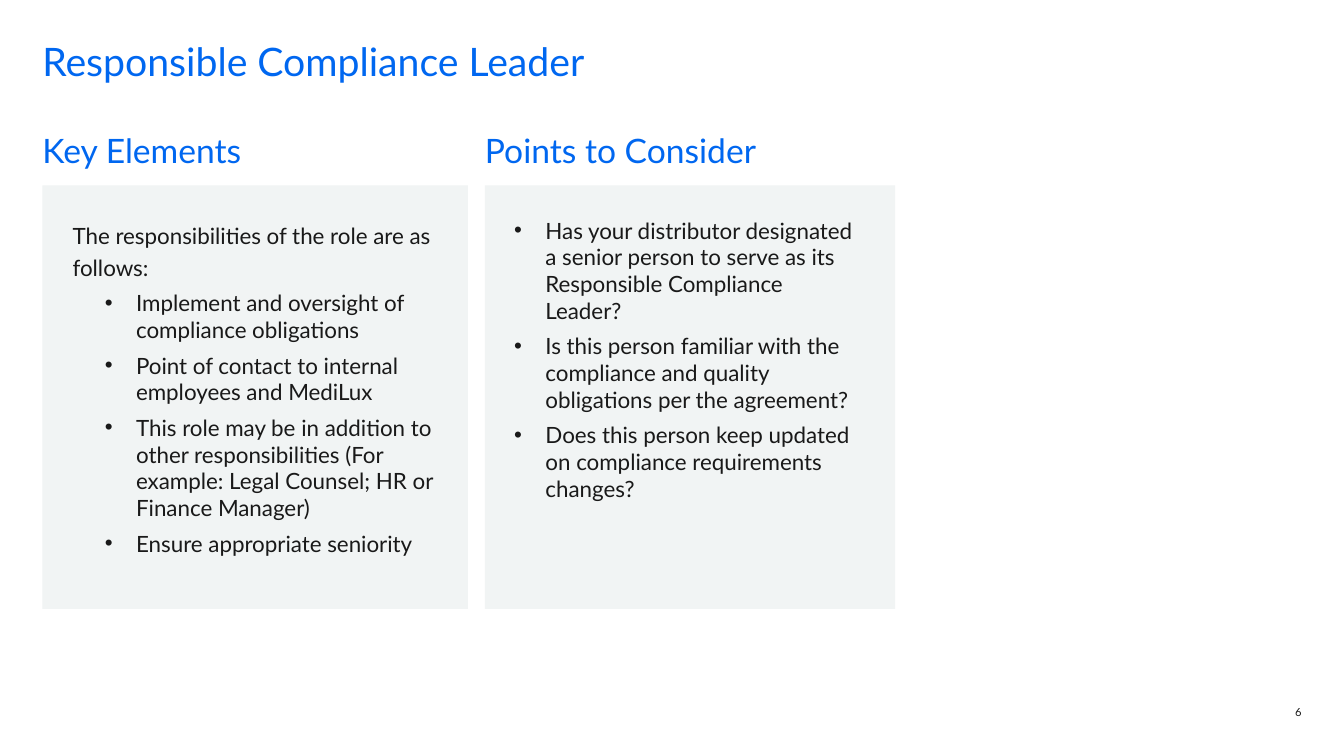
from dataclasses import dataclass

from lxml.etree import SubElement
from pptx import Presentation
from pptx.dml.color import RGBColor
from pptx.enum.shapes import MSO_SHAPE
from pptx.enum.text import MSO_ANCHOR, MSO_AUTO_SIZE, PP_ALIGN
from pptx.oxml.ns import qn
from pptx.slide import Slide
from pptx.text.text import TextFrame
from pptx.util import Inches, Pt

BLUE, INK, PANEL = "0067F0", "191919", "F1F4F4"
FONT = "Lato"
HANGING = 0.31


@dataclass(frozen=True)
class Line:
    text: str
    size: float = 16
    color: str = INK
    indent: float = 0
    bullet: bool = False
    spacing: float = 1.0
    after: float = 6
    align: PP_ALIGN = PP_ALIGN.LEFT


@dataclass(frozen=True)
class Column:
    heading: str
    left: float
    width: float
    body_left: float
    body_width: float
    body_height: float
    lines: list[Line]


def color_of(value: str) -> RGBColor:
    return RGBColor.from_string(value)


def add_bullet(para, indent: float) -> None:
    properties = para._p.get_or_add_pPr()
    properties.set("marL", str(Inches(indent)))
    properties.set("indent", str(Inches(-HANGING)))
    SubElement(properties, qn("a:buFont")).set("typeface", "Arial")
    SubElement(properties, qn("a:buChar")).set("char", "•")


def write_lines(frame: TextFrame, lines: list[Line]) -> None:
    frame_format = {
        "margin_left": 0, "margin_top": 0, "margin_right": 0, "margin_bottom": 0,
        "word_wrap": True, "auto_size": MSO_AUTO_SIZE.NONE,
        "vertical_anchor": MSO_ANCHOR.TOP,
    }
    for name, value in frame_format.items():
        setattr(frame, name, value)
    for index, line in enumerate(lines):
        para = frame.add_paragraph() if index else frame.paragraphs[0]
        if line.bullet:
            add_bullet(para, line.indent)
        para_format = {
            "alignment": line.align, "line_spacing": line.spacing,
            "space_before": Pt(0), "space_after": Pt(line.after),
        }
        for name, value in para_format.items():
            setattr(para, name, value)
        span = para.add_run()
        span.text = line.text
        for name, value in {"name": FONT, "size": Pt(line.size), "bold": False}.items():
            setattr(span.font, name, value)
        span.font.color.rgb = color_of(line.color)


def add_text(page: Slide, left: float, top: float, width: float, height: float,
             lines: list[Line]) -> None:
    box = page.shapes.add_textbox(Inches(left), Inches(top), Inches(width), Inches(height))
    write_lines(box.text_frame, lines)


def add_panel(page: Slide, column: Column) -> None:
    panel = page.shapes.add_shape(MSO_SHAPE.RECTANGLE, Inches(column.left), Inches(1.84),
                                  Inches(column.width), Inches(4.2))
    panel.shadow.inherit = False
    panel.fill.solid()
    panel.fill.fore_color.rgb = color_of(PANEL)
    panel.line.fill.background()


def add_column(page: Slide, column: Column) -> None:
    add_panel(page, column)
    add_text(page, column.body_left, 2.15, column.body_width, column.body_height, column.lines)
    add_text(page, column.left, 1.29, 3.89, 0.55,
             [Line(column.heading, size=24, color=BLUE, after=15)])


def bullets(indent: float, *texts: str) -> list[Line]:
    return [Line(text, indent=indent, bullet=True) for text in texts]


COLUMNS = [
    Column("Key Elements", 0.42, 4.22, 0.72, 3.59, 2.82, [
        Line("The responsibilities of the role are as follows:", spacing=1.2),
        *bullets(
            2 * HANGING + 0.01,
            "Implement and oversight of compliance obligations",
            "Point of contact to internal employees and MediLux",
            "This role may be in addition to other responsibilities "
            "(For example: Legal Counsel; HR or Finance Manager)",
            "Ensure appropriate seniority",
        ),
    ]),
    Column("Points to Consider", 4.81, 4.07, 5.1, 3.45, 3.55, bullets(
        HANGING,
        "Has your distributor designated a senior person to serve as its "
        "Responsible Compliance Leader?",
        "Is this person familiar with the compliance and quality "
        "obligations per the agreement?",
        "Does this person keep updated on compliance requirements changes?",
    )),
]


def main() -> None:
    deck = Presentation()
    deck.slide_width, deck.slide_height = Inches(13.33), Inches(7.5)
    page = deck.slides.add_slide(deck.slide_layouts[5])

    # Title
    title = page.shapes.title
    place = {"left": 0.42, "top": 0.42, "width": 12.5, "height": 0.42}
    for name, value in place.items():
        setattr(title, name, Inches(value))
    write_lines(title.text_frame, [
        Line("Responsible Compliance Leader", size=28, color=BLUE, spacing=0.9, after=0),
    ])

    # Columns
    for column in COLUMNS:
        add_column(page, column)

    # Page number
    add_text(page, 12.65, 7, 0.26, 0.19, [Line("6", size=8, after=0, align=PP_ALIGN.RIGHT)])

    deck.save("out.pptx")


if __name__ == "__main__":
    main()
